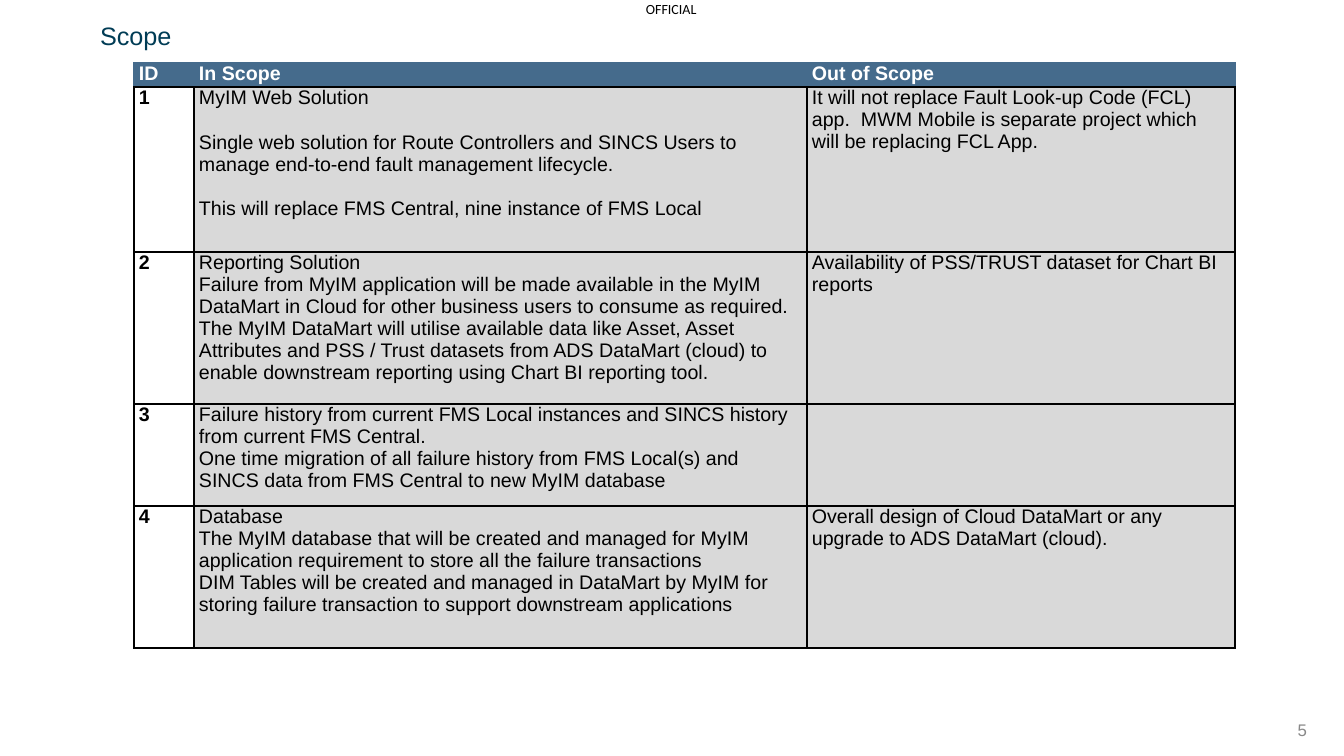
from dataclasses import dataclass

from lxml.etree import SubElement
from pptx import Presentation
from pptx.dml.color import RGBColor
from pptx.enum.text import MSO_ANCHOR as Anchor, MSO_AUTO_SIZE as AutoSize, PP_ALIGN as Align
from pptx.oxml.ns import qn
from pptx.util import Emu, Pt


@dataclass(frozen=True)
class Theme:
    font: str = "Arial"
    marking_font: str = "Calibri"
    title: str = "003C55"
    header: str = "456B8C"
    scope: str = "D9D9D9"
    white: str = "FFFFFF"
    black: str = "000000"
    muted: str = "898989"
    title_size: int = 18
    table_size: int = 14
    number_size: int = 12
    marking_size: int = 10


THEME = Theme()
EMU_PER_INCH = 914400
PX_PER_INCH = 100.8

COLUMN_WIDTHS = (60, 613, 428)
ROW_HEIGHTS = (24, 165, 152, 102, 142)
HEADINGS = ("ID", "In Scope", "Out of Scope")
SPACED_ROW = 1
PARAGRAPH_GAP = 16
SCOPE_ROWS = (
    (
        "1",
        "MyIM Web Solution\n"
        "Single web solution for Route Controllers and SINCS Users to manage "
        "end-to-end fault management lifecycle.\n"
        "This will replace FMS Central, nine instance of FMS Local",
        "It will not replace Fault Look-up Code (FCL) app.  MWM Mobile is "
        "separate project which will be replacing FCL App.",
    ),
    (
        "2",
        "Reporting Solution\n"
        "Failure from MyIM application will be made available in the MyIM "
        "DataMart in Cloud for other business users to consume as required. "
        "The MyIM DataMart will utilise available data like Asset, Asset "
        "Attributes and PSS / Trust datasets from ADS DataMart (cloud) to "
        "enable downstream reporting using Chart BI reporting tool.",
        "Availability of PSS/TRUST dataset for Chart BI reports",
    ),
    (
        "3",
        "Failure history from current FMS Local instances and SINCS history "
        "from current FMS Central.\n"
        "One time migration of all failure history from FMS Local(s) and "
        "SINCS data from FMS Central to new MyIM database",
        "",
    ),
    (
        "4",
        "Database\n"
        "The MyIM database that will be created and managed for MyIM "
        "application requirement to store all the failure transactions\n"
        "DIM Tables will be created and managed in DataMart by MyIM for "
        "storing failure transaction to support downstream applications",
        "Overall design of Cloud DataMart or any upgrade to ADS DataMart (cloud).",
    ),
)


def px(value):
    return Emu(round(value * EMU_PER_INCH / PX_PER_INCH))


def rgb(value):
    return RGBColor.from_string(value)


def format_text(text_frame, size, color, font=THEME.font, bold=False, align=Align.LEFT):
    for paragraph in text_frame.paragraphs:
        paragraph.alignment = align
        for run in paragraph.runs:
            run.font.name = font
            run.font.size = Pt(size)
            run.font.bold = bold
            run.font.color.rgb = rgb(color)


def place(shape, left, top, width, height):
    shape.left, shape.top = px(left), px(top)
    shape.width, shape.height = px(width), px(height)


def set_margins(box, horizontal, vertical):
    box.margin_left = box.margin_right = px(horizontal)
    box.margin_top = box.margin_bottom = px(vertical)


def add_title(slide, text):
    title = slide.shapes.title
    place(title, 90, 15, 493, 40)
    text_frame = title.text_frame
    text_frame.text = text
    text_frame.auto_size = AutoSize.NONE
    text_frame.vertical_anchor = Anchor.TOP
    set_margins(text_frame, 10, 5)
    format_text(text_frame, THEME.title_size, THEME.title)


def add_label(slide, text, box, margins, size, color, font, align, wrap):
    label = slide.shapes.add_textbox(*map(px, box))
    text_frame = label.text_frame
    text_frame.word_wrap = wrap
    text_frame.vertical_anchor = Anchor.MIDDLE
    set_margins(text_frame, *margins)
    text_frame.text = text
    format_text(text_frame, size, color, font, align=align)


def set_borders(cell, colors):
    properties = cell._tc.get_or_add_tcPr()
    for side, color in zip("LRTB", colors):
        line = SubElement(properties, qn(f"a:ln{side}"), w=str(Pt(1)))
        fill = SubElement(line, qn("a:solidFill"))
        SubElement(fill, qn("a:srgbClr"), val=color)


def fill_cell(cell, text, fill, color, bold, borders):
    set_margins(cell, 5, 0)
    set_borders(cell, borders)
    cell.fill.solid()
    cell.fill.fore_color.rgb = rgb(fill)
    cell.text_frame.text = text
    format_text(cell.text_frame, THEME.table_size, color, bold=bold)


def add_scope_table(slide):
    rows = (HEADINGS, *SCOPE_ROWS)
    frame = slide.shapes.add_table(
        len(rows), len(HEADINGS), px(134), px(63),
        px(sum(COLUMN_WIDTHS)), px(sum(ROW_HEIGHTS)),
    )
    table = frame.table
    table.horz_banding = False
    for column, width in zip(table.columns, COLUMN_WIDTHS):
        column.width = px(width)
    for row, height in zip(table.rows, ROW_HEIGHTS):
        row.height = px(height)
    header_borders = (THEME.header,) * 3 + (THEME.black,)
    body_borders = (THEME.black,) * 4
    for row_index, texts in enumerate(rows):
        for column_index, text in enumerate(texts):
            cell = table.cell(row_index, column_index)
            if row_index == 0:
                fill_cell(cell, text, THEME.header, THEME.white, True, header_borders)
            else:
                is_id = column_index == 0
                fill = THEME.white if is_id else THEME.scope
                fill_cell(cell, text, fill, THEME.black, is_id, body_borders)
    for paragraph in table.cell(SPACED_ROW, 1).text_frame.paragraphs[1:]:
        paragraph.space_before = Pt(PARAGRAPH_GAP)


def main():
    presentation = Presentation()
    presentation.slide_width, presentation.slide_height = px(1344), px(756)
    slide = presentation.slides.add_slide(presentation.slide_layouts[5])
    add_title(slide, "Scope")
    add_label(slide, "OFFICIAL", (646, 0, 53, 17), (0, 0), THEME.marking_size,
              THEME.black, THEME.marking_font, Align.LEFT, False)
    add_label(slide, "5", (1223, 720, 94, 20), (10, 5), THEME.number_size,
              THEME.muted, THEME.font, Align.RIGHT, True)
    add_scope_table(slide)
    presentation.save("out.pptx")


if __name__ == "__main__":
    main()
